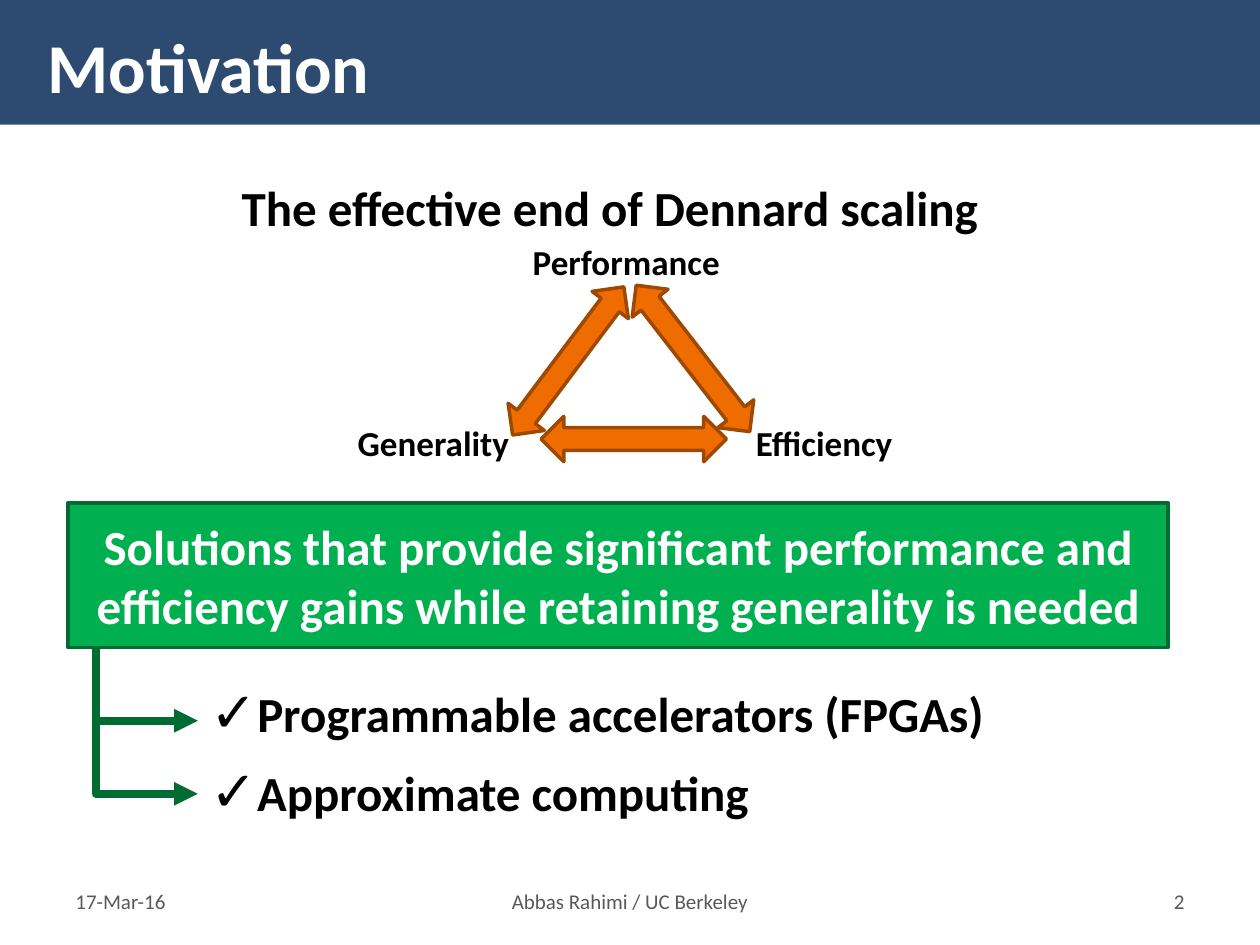
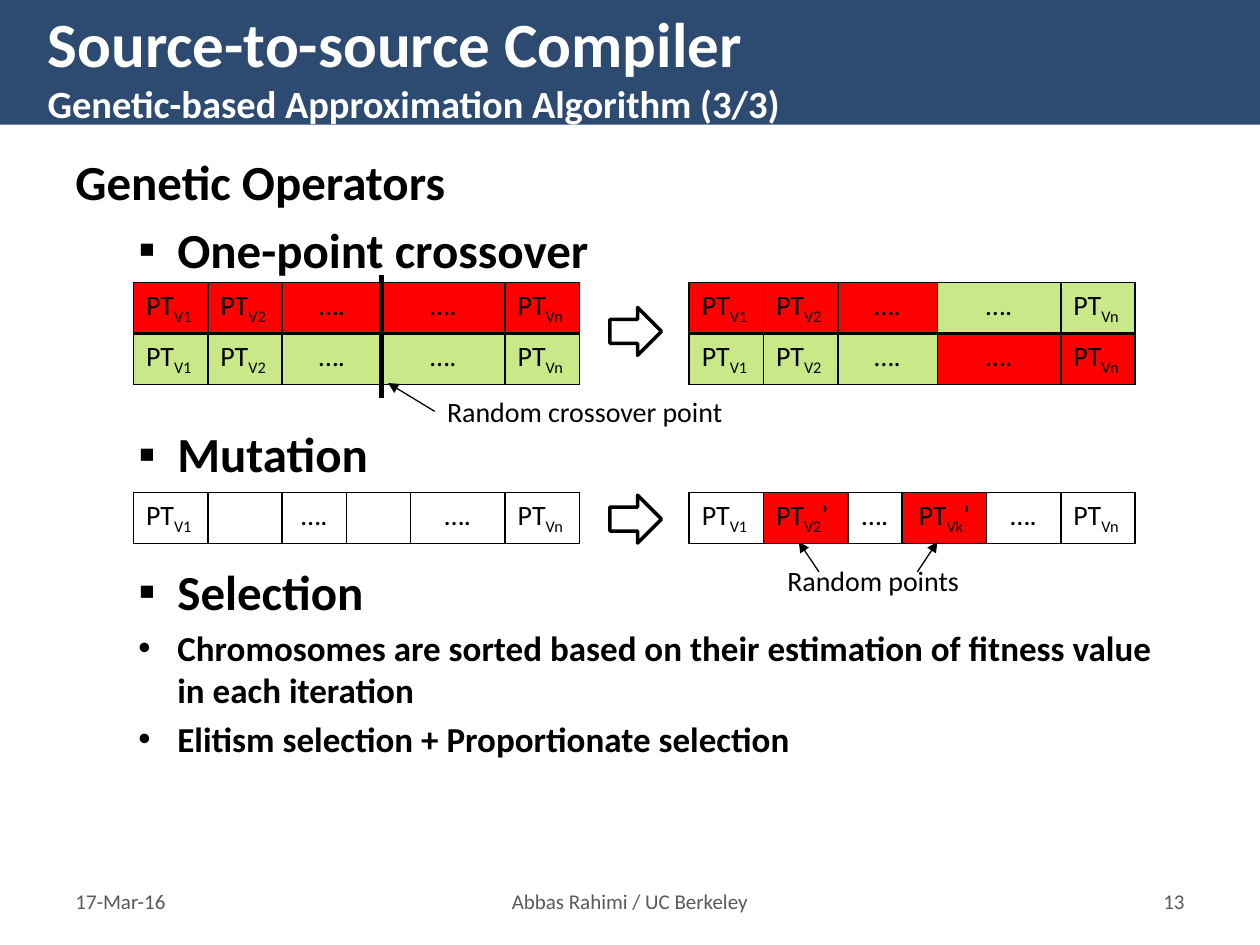
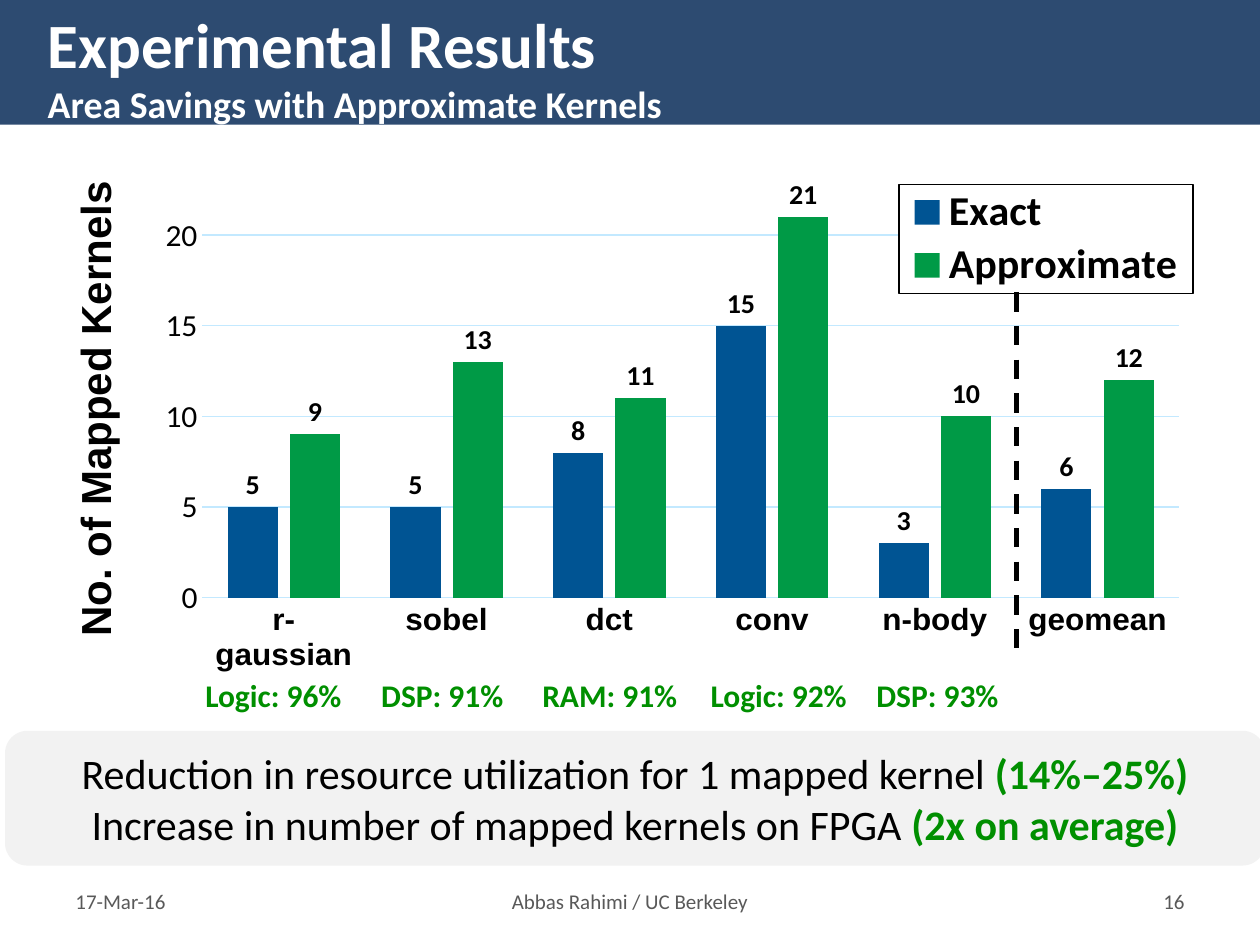
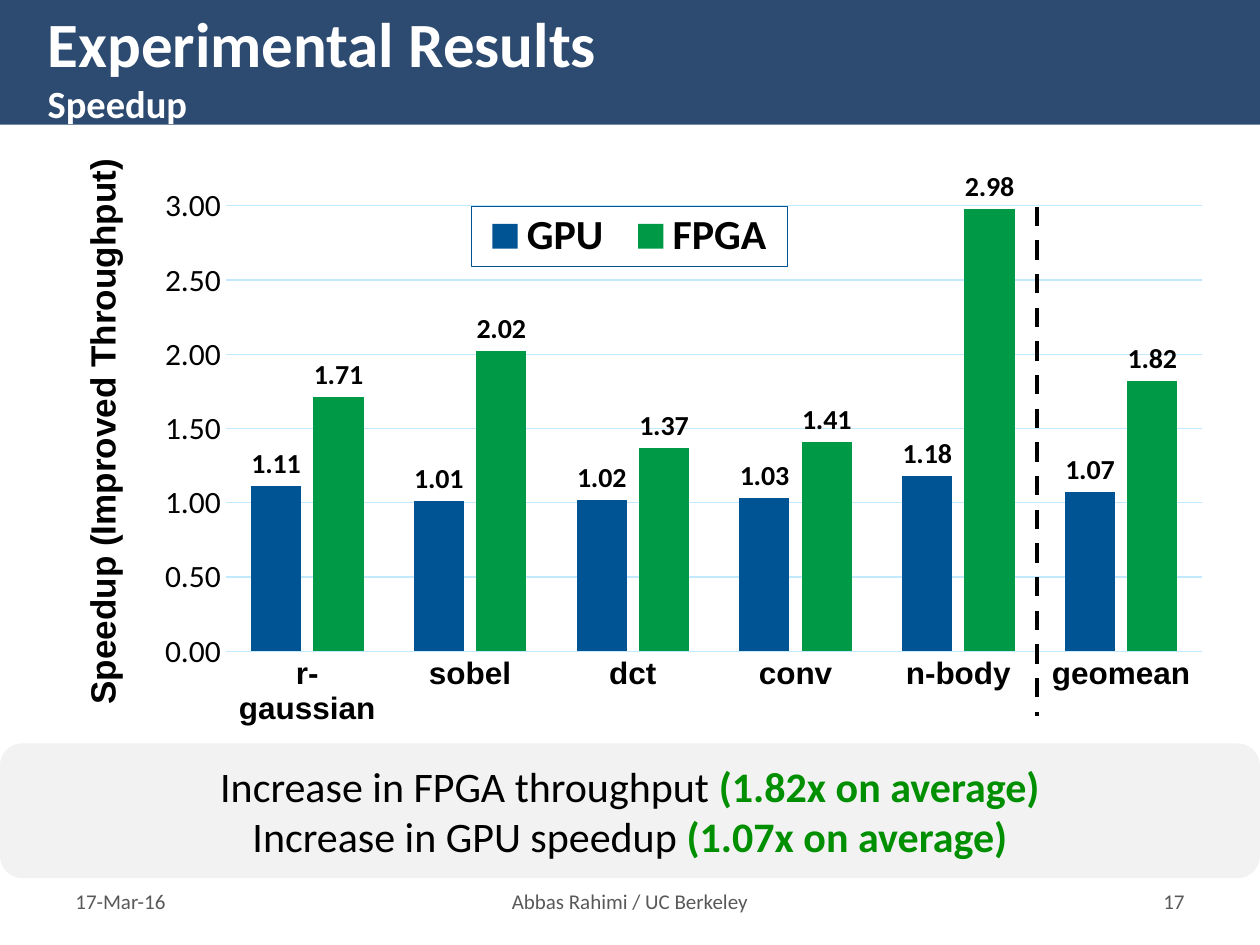
from lxml.etree import SubElement
from pptx import Presentation
from pptx.chart.data import CategoryChartData
from pptx.dml.color import RGBColor
from pptx.enum.chart import XL_CHART_TYPE, XL_LABEL_POSITION, XL_LEGEND_POSITION, XL_TICK_MARK
from pptx.enum.dml import MSO_LINE
from pptx.enum.shapes import MSO_CONNECTOR, MSO_SHAPE
from pptx.enum.text import MSO_ANCHOR, MSO_AUTO_SIZE, PP_ALIGN
from pptx.oxml import parse_xml
from pptx.oxml.ns import nsdecls, qn
from pptx.util import Inches, Pt

COLUMNS, ROWS = 100, 75
CELL = Inches(0.1)

BLACK, WHITE, GREY = "000000", "FFFFFF", "595959"
NAVY, PALE, GRID_BLUE = "2D4B71", "F2F2F2", "C3E9FF"
ORANGE, BROWN = "EE6C00", "9F4800"
GREEN, DARK_GREEN, TEXT_GREEN = "00B050", "006C31", "008F00"
RED, LIME = "FF0000", "C9E988"
SERIES_COLORS = ("005493", "009A46")

BENCHMARKS = ("r-gaussian", "sobel", "dct", "conv", "n-body", "geomean")
HIGHLIGHT = {"color": TEXT_GREEN, "bold": True}
DOTS = "…."


def rgb(value):
    return RGBColor.from_string(value)


def assign(target, values):
    for name, value in values.items():
        setattr(target, name, value)


def style_font(font, size=18, color=BLACK, bold=False, name="Calibri"):
    assign(font, {"size": Pt(size), "bold": bold, "name": name})
    font.color.rgb = rgb(color)


def paint(fill, color):
    fill.solid()
    fill.fore_color.rgb = rgb(color)


def outline(line, color, width):
    if color is None:
        line.fill.background()
    else:
        paint(line.fill, color)
        line.width = Pt(width)


def manual_layout(shares, inner=False):
    target = '<c:layoutTarget val="inner"/>' if inner else ""
    modes = "".join(f'<c:{axis}Mode val="edge"/>' for axis in "xy")
    sizes = "".join(f'<c:{key} val="{share}"/>' for key, share in zip("xywh", shares))
    return parse_xml(
        f'<c:layout {nsdecls("c")}><c:manualLayout>{target}{modes}{sizes}</c:manualLayout></c:layout>'
    )


class Deck:
    def __init__(self):
        self.presentation = Presentation()
        assign(self.presentation, {"slide_width": COLUMNS * CELL, "slide_height": ROWS * CELL})
        self.slide = None

    def grid(self, *lengths):
        return [round(length * CELL) for length in lengths]

    def start(self, number, title, subtitle=None, subtitle_size=22):
        self.slide = self.presentation.slides.add_slide(self.presentation.slide_layouts[6])
        self.shape(MSO_SHAPE.RECTANGLE, (0, 0, COLUMNS, 9.9), NAVY)
        heading = [(title, {"size": 36 if subtitle else 40})]
        if subtitle:
            heading += [("\n", {}), (subtitle, {"size": subtitle_size})]
        self.text((2.8, 1, 94.5, 8.4), [heading], anchor=MSO_ANCHOR.MIDDLE, color=WHITE, bold=True)
        footers = (
            (5, 11.9, PP_ALIGN.LEFT, "17-Mar-16"),
            (18.5, 63, PP_ALIGN.CENTER, "Abbas Rahimi / UC Berkeley"),
            (83.1, 11.9, PP_ALIGN.RIGHT, str(number)),
        )
        for left, width, align, footer in footers:
            self.text((left, 69.5, width, 4), footer, align, MSO_ANCHOR.MIDDLE, size=12, color=GREY)

    def typeset(self, frame, content, align=PP_ALIGN.LEFT, **base):
        paragraphs = [[(content, {})]] if isinstance(content, str) else content
        for index, runs in enumerate(paragraphs):
            paragraph = frame.add_paragraph() if index else frame.paragraphs[0]
            paragraph.alignment = align
            for words, changes in runs:
                if words == "\n":
                    paragraph.add_line_break()
                    continue
                run = paragraph.add_run()
                run.text = words
                style_font(run.font, **{**base, **changes})

    def text(self, box, content, align=PP_ALIGN.LEFT, anchor=MSO_ANCHOR.TOP, rotation=0, **base):
        holder = self.slide.shapes.add_textbox(*self.grid(*box))
        holder.rotation = rotation
        assign(holder.text_frame, {"word_wrap": True, "vertical_anchor": anchor})
        self.typeset(holder.text_frame, content, align, **base)
        return holder

    def label(self, box, content, **base):
        holder = self.text(box, content, **base)
        assign(holder.text_frame, {"word_wrap": False, "auto_size": MSO_AUTO_SIZE.SHAPE_TO_FIT_TEXT})
        return holder

    def shape(self, kind, box, fill, edge=None, content=None, align=PP_ALIGN.CENTER,
              anchor=MSO_ANCHOR.MIDDLE, rotation=0, **base):
        figure = self.slide.shapes.add_shape(kind, *self.grid(*box))
        figure.shadow.inherit = False
        figure.rotation = rotation
        paint(figure.fill, fill)
        outline(figure.line, edge, 2)
        if content:
            assign(figure.text_frame, {"word_wrap": True, "vertical_anchor": anchor})
            self.typeset(figure.text_frame, content, align, **base)

    def line(self, start, end, color, width, arrow=False, dash=None, bend=None):
        kind = MSO_CONNECTOR.STRAIGHT if bend is None else MSO_CONNECTOR.ELBOW
        connector = self.slide.shapes.add_connector(kind, *self.grid(*start, *end))
        outline(connector.line, color, width)
        if dash:
            connector.line.dash_style = dash
        properties = connector.element.spPr
        if bend is not None:
            guides = properties.find(qn("a:prstGeom")).get_or_add_avLst()
            SubElement(guides, qn("a:gd"), name="adj1", fmla=f"val {round(bend * 100000)}")
        if arrow:
            SubElement(properties.find(qn("a:ln")), qn("a:tailEnd"), type="triangle")
        SubElement(properties, qn("a:effectLst"))
        return connector

    def chromosome(self, left, top, widths, genes, fills):
        frame = self.slide.shapes.add_table(1, len(genes), *self.grid(left, top, sum(widths), 3.7))
        table = frame.table
        assign(table, {"first_row": False, "horz_banding": False})
        for column, width in zip(table.columns, widths):
            column.width = self.grid(width)[0]
        for index, (gene, fill) in enumerate(zip(genes, fills)):
            cell = table.cell(0, index)
            properties = cell._tc.get_or_add_tcPr()
            for side in ("lnL", "lnR", "lnT", "lnB"):
                border = SubElement(properties, qn(f"a:{side}"), w=str(Pt(1)))
                SubElement(SubElement(border, qn("a:solidFill")), qn("a:srgbClr"), val=BLACK)
            paint(cell.fill, fill)
            if not gene:
                continue
            centered = gene == DOTS or "Vk" in gene
            parts = [(part, {}) for part in gene.split("_")]
            self.typeset(cell.text_frame, [parts], PP_ALIGN.CENTER if centered else PP_ALIGN.LEFT, size=16)
            for subscript in cell.text_frame.paragraphs[0].runs[1::2]:
                subscript._r.get_or_add_rPr().set("baseline", "-25000")

    def summary(self, left, top, statements):
        content = [[(statement, {}), (result, HIGHLIGHT)] for statement, result in statements]
        self.shape(MSO_SHAPE.ROUNDED_RECTANGLE, (left, top, COLUMNS, 10.7), PALE, content=content, size=24)

    def columns(self, box, series, top_value, step, number_format, plot_area,
                legend_place, legend_area, legend_edge):
        data = CategoryChartData(number_format=number_format)
        data.categories = BENCHMARKS
        for name, values in series.items():
            data.add_series(name, values)
        chart = self.slide.shapes.add_chart(XL_CHART_TYPE.COLUMN_CLUSTERED, *self.grid(*box), data).chart
        assign(chart, {"has_title": False, "has_legend": True})
        style_font(chart.font, 10)

        plot = chart.plots[0]
        assign(plot, {"gap_width": 100, "overlap": -24, "vary_by_categories": False})
        for bars, color in zip(plot.series, SERIES_COLORS):
            paint(bars.format.fill, color)
            assign(bars.data_labels, {
                "show_value": True, "position": XL_LABEL_POSITION.OUTSIDE_END,
                "number_format": number_format, "number_format_is_linked": False,
            })
            style_font(bars.data_labels.font, 16, bold=True)

        kernels, values = chart.category_axis, chart.value_axis
        for axis in (kernels, values):
            assign(axis, {"major_tick_mark": XL_TICK_MARK.NONE, "minor_tick_mark": XL_TICK_MARK.NONE})
        style_font(kernels.tick_labels.font, bold=True, name="Arial")
        outline(kernels.format.line, GRID_BLUE, 0.75)
        assign(values, {
            "minimum_scale": 0, "maximum_scale": top_value,
            "major_unit": step, "has_major_gridlines": True,
        })
        assign(values.tick_labels, {"number_format": number_format, "number_format_is_linked": False})
        style_font(values.tick_labels.font)
        outline(values.format.line, None, 0)
        outline(values.major_gridlines.format.line, GRID_BLUE, 0.75)

        assign(chart.legend, {"position": legend_place, "include_in_layout": True})
        style_font(chart.legend.font, 24, bold=True)
        area = chart.element.find(".//" + qn("c:plotArea"))
        legend = chart.element.find(".//" + qn("c:legend"))
        for parent in (area, legend):
            for layout in parent.findall(qn("c:layout")):
                parent.remove(layout)
        area.insert(0, manual_layout(plot_area, inner=True))
        legend.find(qn("c:legendPos")).addnext(manual_layout(legend_area))
        legend.find(qn("c:overlay")).addnext(parse_xml(
            f'<c:spPr {nsdecls("c", "a")}><a:solidFill><a:srgbClr val="{WHITE}"/></a:solidFill>'
            f'<a:ln w="{Pt(0.75)}"><a:solidFill><a:srgbClr val="{legend_edge}"/></a:solidFill></a:ln></c:spPr>'
        ))


def motivation(deck):
    deck.start(2, "Motivation")
    deck.text((18.2, 13.6, 63.3, 6.2), "The effective end of Dennard scaling", size=28, bold=True)
    goals = (("Performance", 41.3, 18.6, 17), ("Generality", 27.4, 33, 14.1), ("Efficiency", 59, 33, 13.1))
    for goal, left, top, width in goals:
        deck.label((left, top, width, 4.4), goal, size=20, bold=True)
    for left, top, rotation in ((43.3, 21.3, 36.9), (53.2, 21.1, 322.2), (48.5, 27.5, 90)):
        deck.shape(MSO_SHAPE.UP_DOWN_ARROW, (left, top, 3.6, 14.7), ORANGE, BROWN, rotation=rotation)
    solutions = (("Programmable accelerators (FPGAs)", 53.2, 76.8), ("Approximate computing", 59.5, 51.6))
    for solution, top, width in solutions:
        deck.shape(MSO_SHAPE.RECTANGLE, (15.7, top, width, 6.4), WHITE, WHITE,
                   [[("✓", {"size": 32}), (solution, {})]], PP_ALIGN.LEFT, MSO_ANCHOR.TOP,
                   size=28, bold=True)
    for top in (51.3, 57.1):
        deck.line((7.5, top), (15.7, top + 5.9), DARK_GREEN, 4.5, arrow=True, bend=0.014)
    deck.shape(MSO_SHAPE.RECTANGLE, (5.4, 39.9, 87.3, 11.5), GREEN, DARK_GREEN,
               "Solutions that provide significant performance and efficiency gains "
               "while retaining generality is needed", size=28, color=WHITE, bold=True)


def genetic_operators(deck):
    deck.start(13, "Source-to-source Compiler", "Genetic-based Approximation Algorithm (3/3)")
    operators = (
        ("Genetic Operators", 28, None, 5.2),
        ("One-point crossover", 28, "▪", 5.2),
        ("Mutation", 28, "▪", 83.5),
        ("Selection", 28, "▪", 44.7),
        ("Chromosomes are sorted based on their estimation of fitness value in each iteration", 20, "•", 4),
        ("Elitism selection + Proportionate selection", 20, "•", 4),
    )
    body = deck.text((5, 11.5, 90, 55.8), [[(words, {"size": size})] for words, size, _, _ in operators],
                     bold=True)
    for paragraph, (_, _, bullet, gap) in zip(body.text_frame.paragraphs, operators):
        paragraph.space_before = Pt(gap)
        if bullet:
            properties = paragraph._p.get_or_add_pPr()
            for name, inches in (("marL", 0.81), ("indent", -0.31)):
                properties.set(name, str(Inches(inches)))
            SubElement(properties, qn("a:buFont"), typeface="Arial")
            SubElement(properties, qn("a:buChar"), char=bullet)

    before, after = 10.6, 54.7
    parent_widths = (5.9, 5.9, 7.9, 9.8, 5.9)
    parent_genes = ("PT_V1", "PT_V2", DOTS, DOTS, "PT_Vn")
    for top, own, other in ((22.4, RED, LIME), (26.5, LIME, RED)):
        deck.chromosome(before, top, parent_widths, parent_genes, [own] * 5)
        deck.chromosome(after, top, parent_widths, parent_genes, [own] * 3 + [other] * 2)
    deck.chromosome(before, 39.1, (5.9, 5.9, 5.1, 5.1, 7.5, 5.9),
                    ("PT_V1", "", DOTS, "", DOTS, "PT_Vn"), [WHITE] * 6)
    deck.chromosome(after, 39.1, (5.9, 6.7, 4.3, 6.7, 5.9, 5.9),
                    ("PT_V1", "PT_V2_’", DOTS, "PT_Vk_’", DOTS, "PT_Vn"),
                    (WHITE, RED, WHITE, RED, WHITE, WHITE))
    for top in (24.4, 39.3):
        deck.shape(MSO_SHAPE.RIGHT_ARROW, (48.4, top, 4.1, 3.8), WHITE, BLACK)

    crossover_label = deck.label((34.5, 30.8, 24.2, 3.7), "Random crossover point", size=16)
    pointer = deck.line((34.5, 32.6), (30.8, 30.4), BLACK, 0.75, arrow=True)
    pointer.begin_connect(crossover_label, 1)
    deck.line((30.3, 21.8), (30.3, 31.6), BLACK, 3)
    deck.label((61.5, 44.2, 15.8, 3.7), "Random points", size=16)
    for start, end in ((65, 63.4), (72.8, 74.4)):
        deck.line((start, 45.4), (end, 43), BLACK, 0.75, arrow=True)


def area_savings(deck):
    deck.start(16, "Experimental Results", "Area Savings with Approximate Kernels", 21.6)
    deck.columns((10.3, 14.2, 84.8, 39.1),
                 {"Exact": (5, 5, 8, 15, 3, 6), "Approximate": (9, 13, 11, 21, 10, 12)},
                 21, 5, "General", (0.068, 0.075, 0.914, 0.792),
                 XL_LEGEND_POSITION.CORNER, (0.72, 0.007, 0.275, 0.227), BLACK)
    deck.text((-20.1, 21.4, 55.2, 5), "No. of Mapped Kernels", PP_ALIGN.JUSTIFY, rotation=270,
              size=24, bold=True, name="Arial")
    deck.line((80.7, 23.2), (80.7, 52.5), BLACK, 2.75, dash=MSO_LINE.DASH)
    deck.summary(0.4, 58, (
        ("Reduction in resource utilization for 1 mapped kernel ", "(14%–25%)"),
        ("Increase in number of mapped kernels on FPGA ", "(2x on average)"),
    ))
    limits = (("Logic: 96%", 14.6), ("DSP: 91%", 28), ("RAM: 91%", 41.3), ("Logic: 92%", 54.7), ("DSP: 93%", 67.3))
    for limit, left in limits:
        deck.text((left, 53.2, 14.2, 4), limit, PP_ALIGN.CENTER, **HIGHLIGHT)


def speedup(deck):
    deck.start(17, "Experimental Results", "Speedup")
    deck.columns((10.3, 13.2, 86.7, 44.4),
                 {"GPU": (1.11, 1.01, 1.02, 1.03, 1.18, 1.07), "FPGA": (1.71, 2.02, 1.37, 1.41, 2.98, 1.82)},
                 3, 0.5, "0.00", (0.088, 0.072, 0.894, 0.811),
                 XL_LEGEND_POSITION.TOP, (0.313, 0.073, 0.289, 0.109), SERIES_COLORS[0])
    deck.text((-19.5, 27.1, 55.2, 4.4), "Speedup (Improved Throughput)", rotation=270,
              size=20, bold=True, name="Arial")
    deck.summary(0, 59, (
        ("Increase in FPGA throughput ", "(1.82x on average)"),
        ("Increase in GPU speedup ", "(1.07x on average)"),
    ))
    deck.line((82.3, 16.4), (82.3, 56.8), BLACK, 2.75, dash=MSO_LINE.DASH)


def main():
    deck = Deck()
    for build in (motivation, genetic_operators, area_savings, speedup):
        build(deck)
    deck.presentation.save("out.pptx")


if __name__ == "__main__":
    main()
